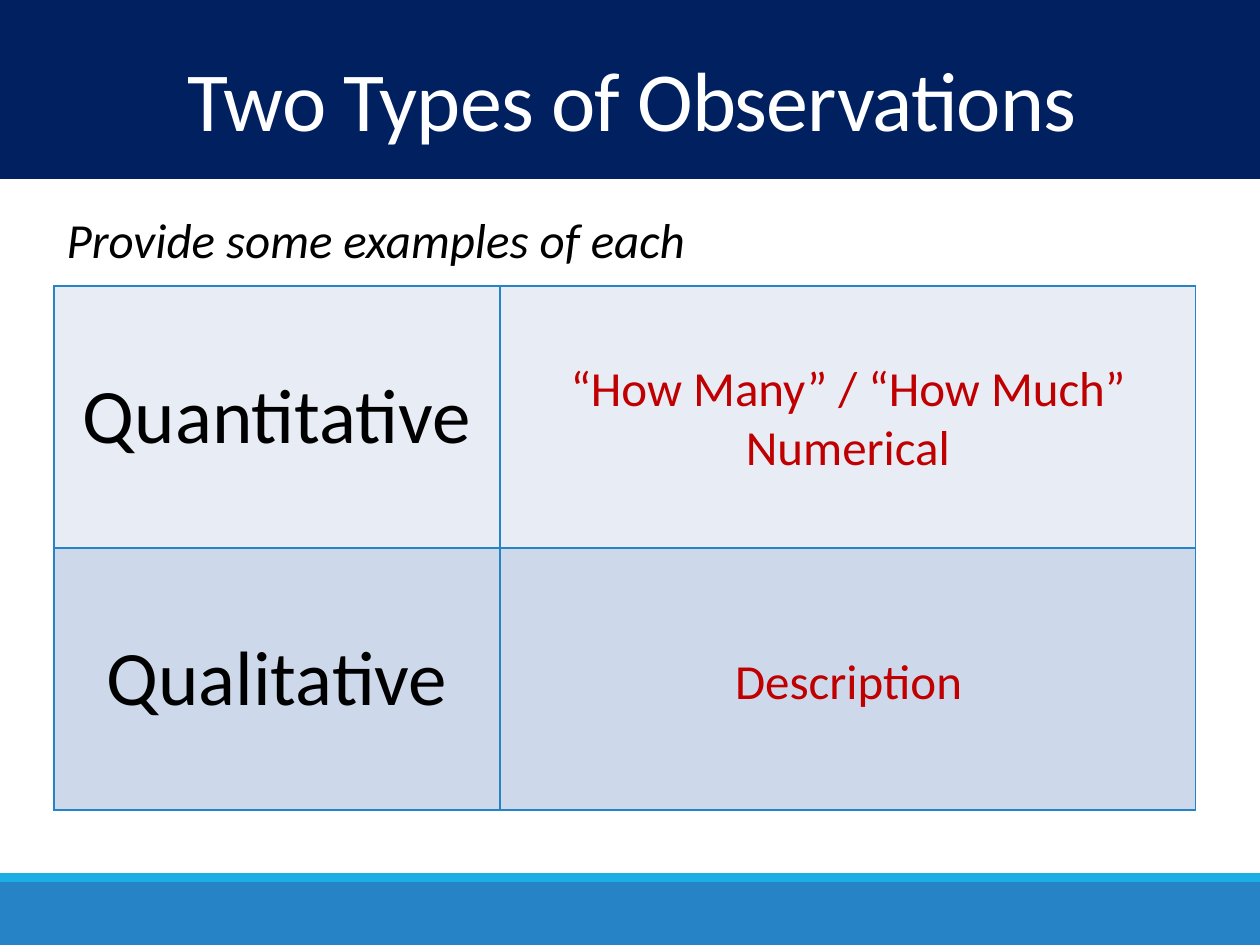
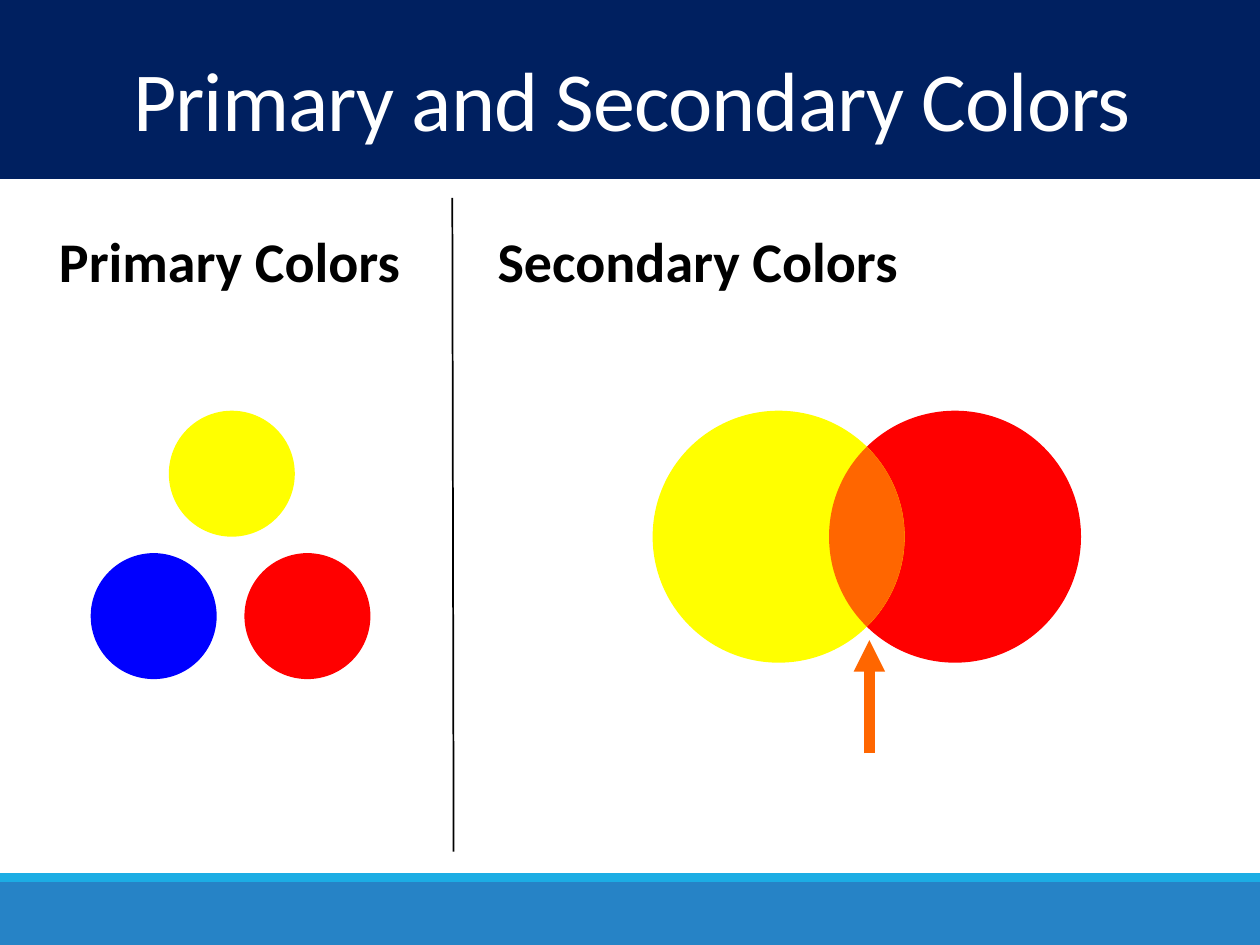
"""Build two science slides: types of observations, and primary and secondary colors."""
from dataclasses import dataclass
from math import acos, cos, sin

from lxml.etree import SubElement
from pptx import Presentation
from pptx.dml.color import RGBColor as Color
from pptx.enum.shapes import MSO_CONNECTOR as Connector, MSO_SHAPE as Shape
from pptx.enum.text import MSO_ANCHOR as Anchor, MSO_AUTO_SIZE as AutoSize, PP_ALIGN as Align
from pptx.oxml.ns import qn
from pptx.util import Inches, Pt


@dataclass(frozen=True)
class Theme:
    font: str = "Calibri"
    navy: str = "002060"
    blue: str = "2683C6"
    sky: str = "1CADE4"
    white: str = "FFFFFF"
    black: str = "000000"
    answer: str = "C00000"
    row_fills: tuple = ("E8EDF5", "CDD9EA")
    yellow: str = "FFFF00"
    red: str = "FF0000"
    primary_blue: str = "0000FF"
    orange: str = "FF6600"
    title_size: int = 48
    term_size: int = 44
    heading_size: int = 32
    body_size: int = 28


theme = Theme()


def write_text(frame, text, size=theme.body_size, color=theme.black, align=Align.LEFT,
               bold=False, italic=False, wrap=True, grow=False, line_spacing=None,
               space_after=None, tracking=None):
    frame.word_wrap = wrap
    if grow:
        frame.auto_size = AutoSize.SHAPE_TO_FIT_TEXT
    for index, line in enumerate(text.split("\n")):
        para = frame.add_paragraph() if index else frame.paragraphs[0]
        para.alignment = align
        if line_spacing:
            para.line_spacing = line_spacing
        if space_after:
            para.space_after = Pt(space_after)
        span = para.add_run()
        span.text = line
        span.font.name = theme.font
        span.font.size = Pt(size)
        span.font.bold = bold
        span.font.italic = italic
        span.font.color.rgb = Color.from_string(color)
        if tracking:
            span.font._element.set("spc", str(round(tracking * 100)))


def paint(shape, color):
    shape.shadow.inherit = False
    shape.fill.solid()
    shape.fill.fore_color.rgb = Color.from_string(color)
    shape.line.fill.background()


deck = Presentation()
deck.slide_width, deck.slide_height = Inches(10), Inches(7.5)

pages = []
for title in ("Two Types of Observations", "Primary and Secondary Colors"):
    page = deck.slides.add_slide(deck.slide_layouts[6])
    for top, height, color in ((7, 0.5, theme.blue), (6.93, 0.07, theme.sky),
                               (0, 1.42, theme.navy)):
        band = page.shapes.add_shape(Shape.RECTANGLE, 0, Inches(top),
                                     deck.slide_width, Inches(height))
        paint(band, color)
    box = page.shapes.add_textbox(Inches(0.03), Inches(0.42), Inches(9.97), Inches(0.84))
    box.text_frame.vertical_anchor = Anchor.MIDDLE
    write_text(box.text_frame, title, size=theme.title_size, color=theme.white,
               align=Align.CENTER, line_spacing=0.85, tracking=-0.5)
    pages.append(page)
observations, colors = pages

table = observations.shapes.add_table(2, 2, Inches(0.43), Inches(2.27),
                                      Inches(9.06), Inches(4.16)).table
table.first_row = table.horz_banding = False
for column, width in zip(table.columns, (3.54, 5.52)):
    column.width = Inches(width)
for row, term, fill in zip(table.rows, ("Quantitative", "Qualitative"), theme.row_fills):
    row.height = Inches(2.08)
    for cell in row.cells:
        cell.vertical_anchor = Anchor.MIDDLE
        properties = cell._tc.get_or_add_tcPr()
        for side in ("a:lnL", "a:lnR", "a:lnT", "a:lnB"):
            border = SubElement(properties, qn(side), w=str(Pt(1)))
            SubElement(SubElement(border, qn("a:solidFill")), qn("a:srgbClr"), val=theme.blue)
        cell.fill.solid()
        cell.fill.fore_color.rgb = Color.from_string(fill)
    write_text(row.cells[0].text_frame, term, size=theme.term_size, align=Align.CENTER)

answer = dict(color=theme.answer, align=Align.CENTER)
heading = dict(size=theme.heading_size, bold=True, wrap=False)
for page, text, at, style in (
    (observations, "Provide some examples of each", (0.43, 1.61, 5.22, 0.57),
     dict(italic=True, wrap=False)),
    (observations, "“How Many” / “How Much”\nNumerical", (4.23, 2.79, 5, 1.04), answer),
    (observations, "Description", (5.65, 5.11, 2.17, 0.57), dict(answer, wrap=False)),
    (colors, "Primary Colors", (0.37, 1.75, 2.94, 0.64), heading),
    (colors, "Secondary Colors", (3.85, 1.75, 3.41, 0.64), dict(heading, space_after=12)),
):
    box = page.shapes.add_textbox(*map(Inches, at))
    write_text(box.text_frame, text, grow=True, **style)

for left, top, diameter, color in (
    (0.72, 4.39, 1, theme.primary_blue),
    (1.94, 4.39, 1, theme.red),
    (1.34, 3.26, 1, theme.yellow),
    (6.58, 3.26, 2, theme.red),
    (5.18, 3.26, 2, theme.yellow),
):
    circle = colors.shapes.add_shape(Shape.OVAL, Inches(left), Inches(top),
                                     Inches(diameter), Inches(diameter))
    paint(circle, color)

overlap_x, overlap_y, radius, center_offset = 6.88, 4.26, 1, 0.7
half_angle = acos(center_offset / radius)
steps = 40
for direction in (1, -1):
    arc = []
    for step in range(steps + 1):
        angle = half_angle * (2 * step / steps - 1)
        reach = radius * cos(angle) - center_offset
        arc.append((Inches(overlap_x + direction * reach),
                    Inches(overlap_y + radius * sin(angle))))
    builder = colors.shapes.build_freeform(*arc[0])
    builder.add_line_segments(arc[1:], close=True)
    paint(builder.convert_to_shape(), theme.orange)

for start, end, color, width, has_arrow in (
    ((3.59, 1.57), (3.6, 6.76), theme.black, 1, False),
    ((6.9, 5.98), (6.9, 5.08), theme.orange, 6, True),
):
    line = colors.shapes.add_connector(Connector.STRAIGHT, *map(Inches, start + end))
    line.line.color.rgb = Color.from_string(color)
    line.line.width = Pt(width)
    if has_arrow:
        SubElement(line.line._get_or_add_ln(), qn("a:tailEnd"), type="triangle")
    SubElement(line._element.spPr, qn("a:effectLst"))

deck.save("out.pptx")
